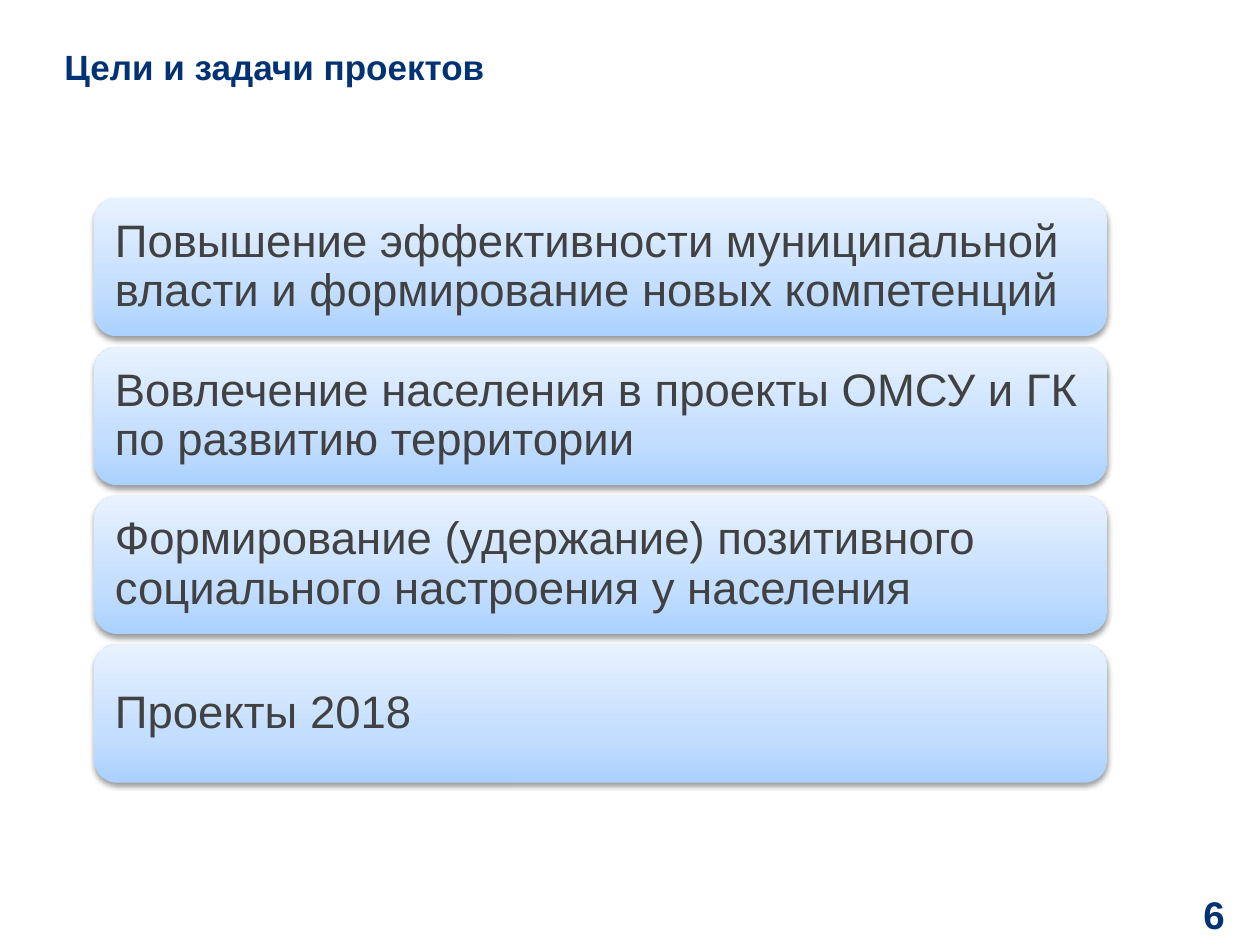
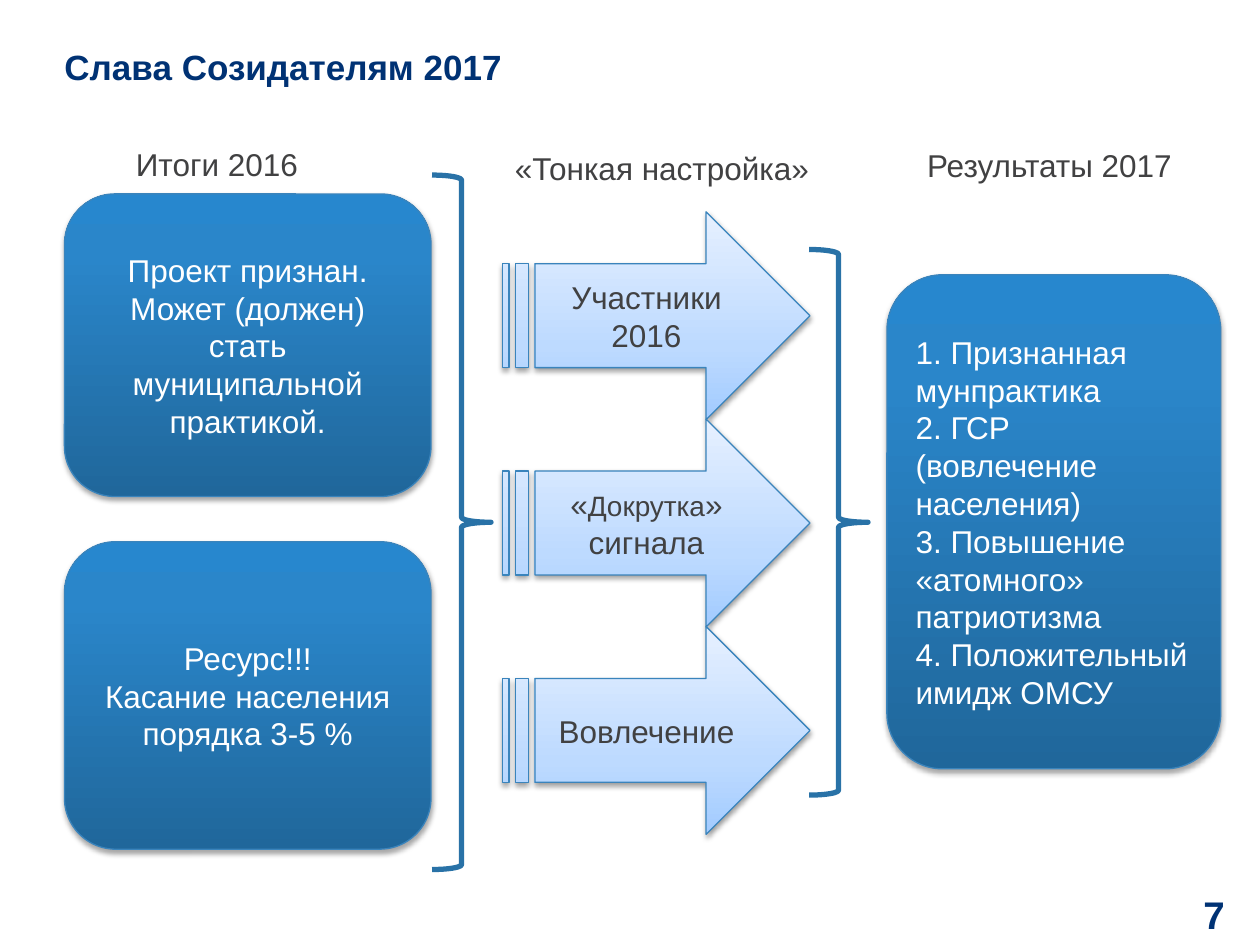
from lxml.etree import SubElement as Sub
from pptx import Presentation
from pptx.dml.color import RGBColor as RGB
from pptx.enum.shapes import MSO_SHAPE as Kind
from pptx.enum.text import MSO_ANCHOR as Anchor, PP_ALIGN as Align
from pptx.oxml.ns import qn
from pptx.util import Cm, Pt

# Content; a paragraph is a text or a list of (text, size) runs
GOALS = [
    "Повышение эффективности муниципальной власти и формирование новых компетенций",
    "Вовлечение населения в проекты ОМСУ и ГК по развитию территории",
    "Формирование (удержание) позитивного социального настроения у населения",
    "Проекты 2018",
]
BLOCKS = [  # box in cm, alignment, paragraphs
    ((1.3, 3.91, 7.39, 6.1), Align.CENTER,
     ["Проект признан.", "Может (должен) стать муниципальной практикой."]),
    ((1.3, 10.92, 7.39, 6.2), Align.CENTER,
     ["Ресурс!!!", "Касание населения порядка 3-5 %"]),
    ((17.88, 5.54, 6.73, 9.96), Align.LEFT,
     ["1. Признанная мунпрактика", "2. ГСР (вовлечение населения)",
      "3. Повышение «атомного» патриотизма", "4. Положительный имидж ОМСУ"]),
]
STEPS = [
    "Участники 2016",
    [("«", 18), ("Докрутка", 16), ("» сигнала", 18)],
    "Вовлечение",
]
BRACES = [(8.71, 3.53, 1.19, 14), (16.31, 5.03, 1.19, 11)]
LABELS = [
    ("Итоги 2016", (2.49, 2.79, 5, 1.02)),
    ("«Тонкая настройка»", (10.13, 2.87, 7.19, 1.02)),
    ("Результаты 2017", (18.44, 2.82, 5.56, 1.02)),
]

# Shared style
FONT = "Arial"
NAVY = RGB(0x00, 0x32, 0x74)
GREY = RGB(0x41, 0x41, 0x42)
WHITE = RGB(0xFF, 0xFF, 0xFF)
EDGE = RGB(0x3A, 0x84, 0xBC)
STEEL = RGB(0x29, 0x72, 0xA7)
# Gradient stops run from bottom to top
PALE = [(0, RGB(0xAB, 0xD1, 0xFF)), (35, RGB(0xC4, 0xDE, 0xFF)),
        (100, RGB(0xE8, 0xF2, 0xFF))]
SKY = [(0, RGB(0xA2, 0xCB, 0xFF)), (35, RGB(0xBD, 0xDA, 0xFF)),
       (100, RGB(0xE6, 0xF0, 0xFF))]
DEEP = [(0, RGB(0x20, 0x67, 0x9B)), (80, RGB(0x2A, 0x86, 0xCA)),
        (100, RGB(0x27, 0x87, 0xCE))]


def write(shape, paras, size, color, align=Align.LEFT, bold=False,
          anchor=Anchor.MIDDLE, inset=None, lead=None):
    frame = shape.text_frame
    frame.word_wrap = True
    frame.vertical_anchor = anchor
    if inset is not None:
        frame.margin_left = frame.margin_right = Cm(inset)
        frame.margin_top = frame.margin_bottom = Cm(inset)
    for i, item in enumerate(paras):
        para = frame.add_paragraph() if i else frame.paragraphs[0]
        para.alignment = align
        para.line_spacing = lead
        for text, pts in [(item, size)] if isinstance(item, str) else item:
            run = para.add_run()
            run.text = text
            font = run.font
            font.name, font.size, font.bold = FONT, Pt(pts), bold
            font.color.rgb = color


def label(slide, box, paras, size, color, **style):
    write(slide.shapes.add_textbox(*map(Cm, box)), paras, size, color, **style)


def tint(parent, color, name, value):
    node = Sub(parent, qn("a:srgbClr"), val=str(color))
    if name:
        Sub(node, qn(name), val=str(value))


def plate(slide, kind, box, stops, edge=None, dim=38, drop=1.6):
    """Add a shape with a vertical gradient and a soft shadow below."""
    shape = slide.shapes.add_shape(kind, *map(Cm, box))
    shape.fill.gradient()
    shape.fill.gradient_angle = 90
    props = shape.element.spPr
    ramp = props.find(qn("a:gradFill")).find(qn("a:gsLst"))
    for old in list(ramp):
        ramp.remove(old)
    for pos, color in stops:
        tint(Sub(ramp, qn("a:gs"), pos=str(pos * 1000)), color, None, None)
    if edge:
        shape.line.color.rgb = edge
        shape.line.width = Pt(0.75)
    else:
        shape.line.fill.background()
    shape.shadow.inherit = False
    glow = Sub(props.find(qn("a:effectLst")), qn("a:outerShdw"),
               blurRad=str(Pt(3.1)), dist=str(Pt(drop)), dir="5400000",
               rotWithShape="0")
    tint(glow, RGB(0, 0, 0), "a:alpha", dim * 1000)
    return shape


def brace(slide, box):
    shape = slide.shapes.add_shape(Kind.RIGHT_BRACE, *map(Cm, box))
    shape.fill.background()
    shape.line.color.rgb = STEEL
    shape.line.width = Pt(3)
    shape.shadow.inherit = False


def page(deck, title, num):
    slide = deck.slides.add_slide(deck.slide_layouts[6])
    label(slide, (1.3, 0, 21.21, 2.67), [title], 20, NAVY, bold=True, inset=0)
    label(slide, (22.94, 17.91, 1.75, 1.04), [str(num)], 22, NAVY,
          align=Align.RIGHT, bold=True, inset=0)
    return slide


def main():
    deck = Presentation()
    deck.slide_width, deck.slide_height = Cm(25.4), Cm(19.05)

    # Goals: a stack of equal cards
    slide = page(deck, "Цели и задачи проектов", 6)
    for i, goal in enumerate(GOALS):
        card = plate(slide, Kind.ROUNDED_RECTANGLE,
                     (1.9, 3.99 + 3 * i, 20.42, 2.79), PALE)
        write(card, [goal], 26, GREY, inset=0.28, lead=0.9)

    # From the 2016 outcome to the 2017 results
    slide = page(deck, "Слава Созидателям 2017", 7)
    for box, align, paras in BLOCKS:
        block = plate(slide, Kind.ROUNDED_RECTANGLE, box, DEEP, EDGE, 35, 1.8)
        write(block, paras, 18, WHITE, align=align)
    for i, step in enumerate(STEPS):
        arrow = plate(slide, Kind.STRIPED_RIGHT_ARROW,
                      (10.13, 4.27 + 4.18 * i, 6.2, 4.19), SKY, EDGE)
        write(arrow, [step], 18, GREY, align=Align.CENTER)
    for box in BRACES:
        brace(slide, box)
    for text, box in LABELS:
        label(slide, box, [text], 18, GREY, anchor=Anchor.TOP)

    deck.save("out.pptx")


if __name__ == "__main__":
    main()
